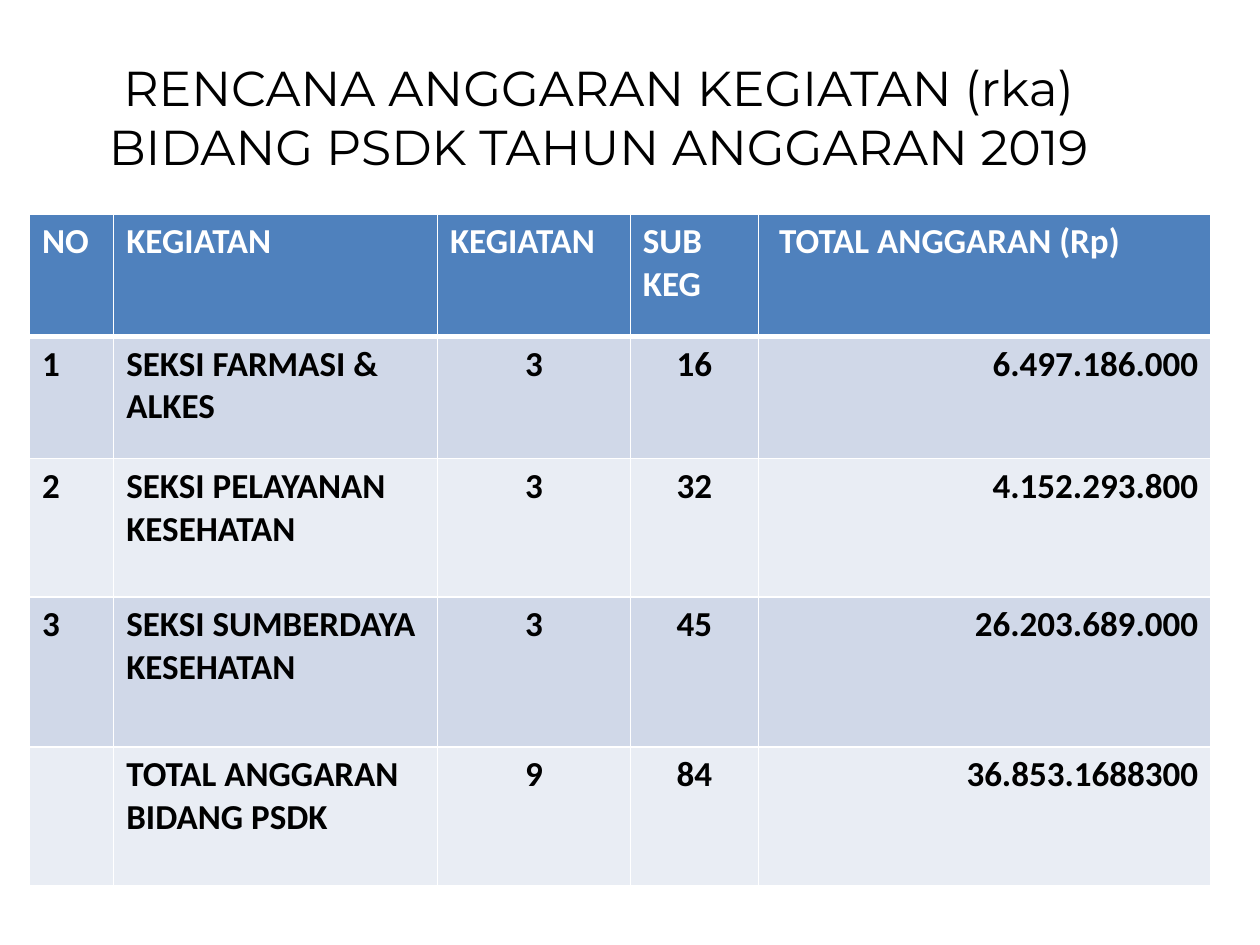
from lxml.etree import SubElement
from pptx import Presentation
from pptx.dml.color import RGBColor
from pptx.enum.text import MSO_ANCHOR, PP_ALIGN as AL
from pptx.oxml.ns import qn
from pptx.util import Pt

BLACK = RGBColor(0x00, 0x00, 0x00)
WHITE = RGBColor(0xFF, 0xFF, 0xFF)
BLUE = RGBColor(0x4F, 0x81, 0xBD)
BAND_DARK = RGBColor(0xD0, 0xD8, 0xE8)
BAND_LIGHT = RGBColor(0xE9, 0xED, 0xF4)

COL_WIDTHS = [48.2, 185, 110.2, 73.4, 258.5]
ROW_HEIGHTS = [69.8, 69.8, 79.2, 85.7, 79.2]
ALIGNS = [AL.LEFT, AL.LEFT, AL.CENTER, AL.CENTER, AL.RIGHT]
ROWS = [
    ["NO", "KEGIATAN", "KEGIATAN", "SUB KEG", " TOTAL ANGGARAN (Rp)"],
    ["1", "SEKSI FARMASI & ALKES", "3", "16", "6.497.186.000"],
    ["2", "SEKSI PELAYANAN KESEHATAN", "3", "32", "4.152.293.800"],
    ["3", "SEKSI SUMBERDAYA KESEHATAN", "3", "45", "26.203.689.000"],
    ["", "TOTAL ANGGARAN BIDANG PSDK", "9", "84", "36.853.1688300"],
]


def write(tf, text, font="Calibri", size=20, color=BLACK, bold=False, align=AL.LEFT):
    p = tf.paragraphs[0]
    p.text = text
    p.alignment = align
    for r in p.runs:
        r.font.name = font
        r.font.size = Pt(size)
        r.font.bold = bold
        r.font.color.rgb = color


def set_borders(cell, bottom):
    """Draw white borders, 1 pt except for the given bottom width."""
    tc_pr = cell._tc.get_or_add_tcPr()
    for i, (side, width) in enumerate([("L", 1), ("R", 1), ("T", 1), ("B", bottom)]):
        ln = SubElement(tc_pr, qn(f"a:ln{side}"), w=str(Pt(width)))
        fill = SubElement(ln, qn("a:solidFill"))
        SubElement(fill, qn("a:srgbClr"), val=str(WHITE))
        tc_pr.insert(i, ln)  # borders come before the cell fill


prs = Presentation()
prs.slide_width, prs.slide_height = Pt(720), Pt(540)
s = prs.slides.add_slide(prs.slide_layouts[6])

title = s.shapes.add_textbox(Pt(0), Pt(21.6), Pt(684), Pt(90))
tf = title.text_frame
tf.word_wrap = True
tf.vertical_anchor = MSO_ANCHOR.MIDDLE
write(tf, "RENCANA ANGGARAN KEGIATAN (rka)\vBIDANG PSDK TAHUN ANGGARAN 2019",
      font="Montserrat", size=28, align=AL.CENTER)

table = s.shapes.add_table(len(ROWS), len(COL_WIDTHS), Pt(16.8), Pt(122.4),
                           Pt(sum(COL_WIDTHS)), Pt(sum(ROW_HEIGHTS))).table
for col, width in zip(table.columns, COL_WIDTHS):
    col.width = Pt(width)
for row, height in zip(table.rows, ROW_HEIGHTS):
    row.height = Pt(height)

for i, texts in enumerate(ROWS):
    header = i == 0
    band = BLUE if header else BAND_DARK if i % 2 else BAND_LIGHT
    for j, text in enumerate(texts):
        cell = table.cell(i, j)
        cell.fill.solid()
        cell.fill.fore_color.rgb = band
        set_borders(cell, bottom=3 if header else 1)
        if text:
            write(cell.text_frame, text, bold=True, color=WHITE if header else BLACK,
                  align=AL.LEFT if header else ALIGNS[j])

prs.save("out.pptx")
